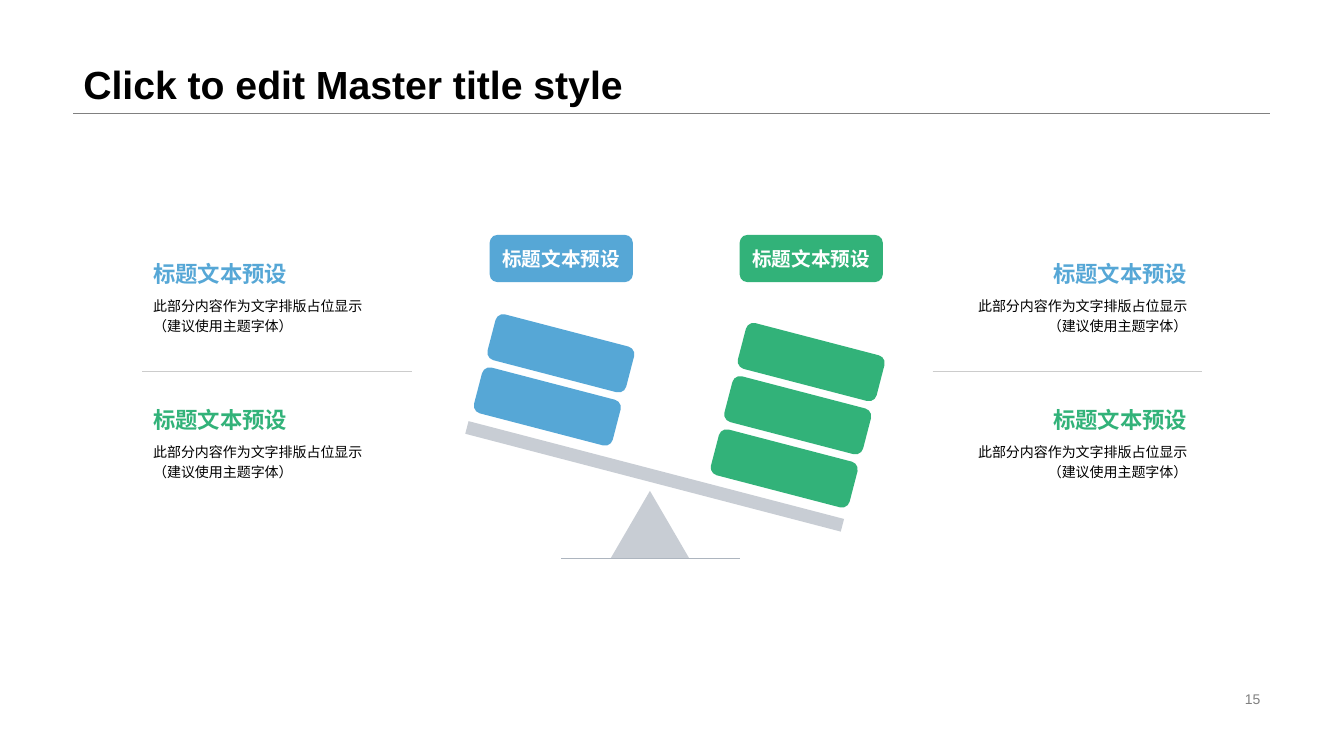
from lxml.etree import SubElement
from pptx import Presentation
from pptx.dml.color import RGBColor
from pptx.enum.shapes import MSO_CONNECTOR, MSO_SHAPE
from pptx.enum.text import MSO_ANCHOR, PP_ALIGN
from pptx.oxml.ns import qn
from pptx.util import Cm, Pt

BLUE, GREEN, SILVER = "56A7D6", "32B279", "C8CDD4"
GRAY, BLACK, WHITE = "808080", "000000", "FFFFFF"
HEADING = "标题文本预设"
BODY = "此部分内容作为文字排版占位显示\v（建议使用主题字体）"


def color(value):
    return RGBColor.from_string(value)


class SlideBuilder:
    """Holds the font and the slide being filled; lengths are centimetres."""

    font_name = "Arial"

    def __init__(self, slide):
        self.slide = slide

    def set_text(self, text_frame, text, size, text_color, bold=False,
                 align=PP_ALIGN.LEFT, anchor=MSO_ANCHOR.TOP, spacing=None):
        text_frame.text = text
        text_frame.vertical_anchor = anchor
        paragraph = text_frame.paragraphs[0]
        paragraph.alignment = align
        paragraph.line_spacing = spacing
        for run in paragraph.runs:
            run.font.name = self.font_name
            run.font.size = Pt(size)
            run.font.bold = bold
            run.font.color.rgb = color(text_color)

    def text(self, left, top, width, height, text, size, text_color,
             inset=True, **style):
        shape = self.slide.shapes.add_textbox(Cm(left), Cm(top), Cm(width), Cm(height))
        text_frame = shape.text_frame
        text_frame.word_wrap = True
        if not inset:
            text_frame.margin_left = text_frame.margin_right = 0
            text_frame.margin_top = text_frame.margin_bottom = 0
        self.set_text(text_frame, text, size, text_color, **style)

    def shape(self, kind, left, top, width, height, fill, rotation=0):
        shape = self.slide.shapes.add_shape(kind, Cm(left), Cm(top), Cm(width), Cm(height))
        shape.shadow.inherit = False
        shape.fill.solid()
        shape.fill.fore_color.rgb = color(fill)
        shape.line.fill.background()
        shape.rotation = rotation
        return shape

    def label(self, left, top, width, height, fill, text):
        shape = self.shape(MSO_SHAPE.ROUNDED_RECTANGLE, left, top, width, height, fill)
        shape.text_frame.word_wrap = False
        self.set_text(shape.text_frame, text, 14, WHITE, bold=True,
                      align=PP_ALIGN.CENTER, anchor=MSO_ANCHOR.MIDDLE)

    def rule(self, left, right, top, line_color, width):
        line = self.slide.shapes.add_connector(
            MSO_CONNECTOR.STRAIGHT, Cm(left), Cm(top), Cm(right), Cm(top))
        line.line.color.rgb = color(line_color)
        line.line.width = Pt(width)
        SubElement(line._element.spPr, qn("a:effectLst"))


def main():
    presentation = Presentation()
    presentation.slide_width, presentation.slide_height = Cm(33.87), Cm(19.05)
    builder = SlideBuilder(presentation.slides.add_slide(presentation.slide_layouts[6]))

    # Title and page number
    builder.rule(1.85, 32, 2.84, GRAY, 0.25)
    builder.text(1.85, 0, 30.15, 2.84, "Click to edit Master title style", 28, BLACK,
                 bold=True, anchor=MSO_ANCHOR.BOTTOM, spacing=0.9)
    builder.text(23.93, 17.32, 8.08, 0.58, "15", 10, GRAY,
                 align=PP_ALIGN.RIGHT, anchor=MSO_ANCHOR.MIDDLE)

    # Tilted beam with its stacked blocks, from the lowest block up
    tilt = 14.6
    block_width, block_height = 3.61, 1.19
    builder.shape(MSO_SHAPE.RECTANGLE, 11.61, 11.84, 9.78, 0.33, SILVER, tilt)
    for left, top, count, fill in ((11.99, 9.65, 2, BLUE), (17.96, 11.21, 3, GREEN)):
        for level in range(count):
            builder.shape(MSO_SHAPE.ROUNDED_RECTANGLE, left + 0.34 * level,
                          top - 1.34 * level, block_width, block_height, fill, tilt)

    # Pivot and ground
    builder.shape(MSO_SHAPE.ISOSCELES_TRIANGLE, 15.39, 12.37, 1.98, 1.7, SILVER)
    builder.rule(14.15, 18.64, 14.07, "ADB5BF", 0.5)

    # Labels above the two stacks
    for left, fill in ((12.34, BLUE), (18.64, GREEN)):
        builder.label(left, 5.92, block_width, block_height, fill, HEADING)

    # Notes on either side, parted by a thin rule
    for left, rule_left, align in ((3.86, 3.58, PP_ALIGN.LEFT),
                                   (22.66, 23.5, PP_ALIGN.RIGHT)):
        for top, heading_color in ((6.55, BLUE), (10.23, GREEN)):
            builder.text(left, top, 7.26, 0.86, HEADING, 16, heading_color,
                         inset=False, bold=True, align=align)
            builder.text(left, top + 0.86, 7.26, 1.42, BODY, 10, BLACK,
                         inset=False, align=align, spacing=1.2)
        builder.rule(rule_left, rule_left + 6.8, 9.37, "CCCCCC", 0.5)

    presentation.save("out.pptx")


if __name__ == "__main__":
    main()
